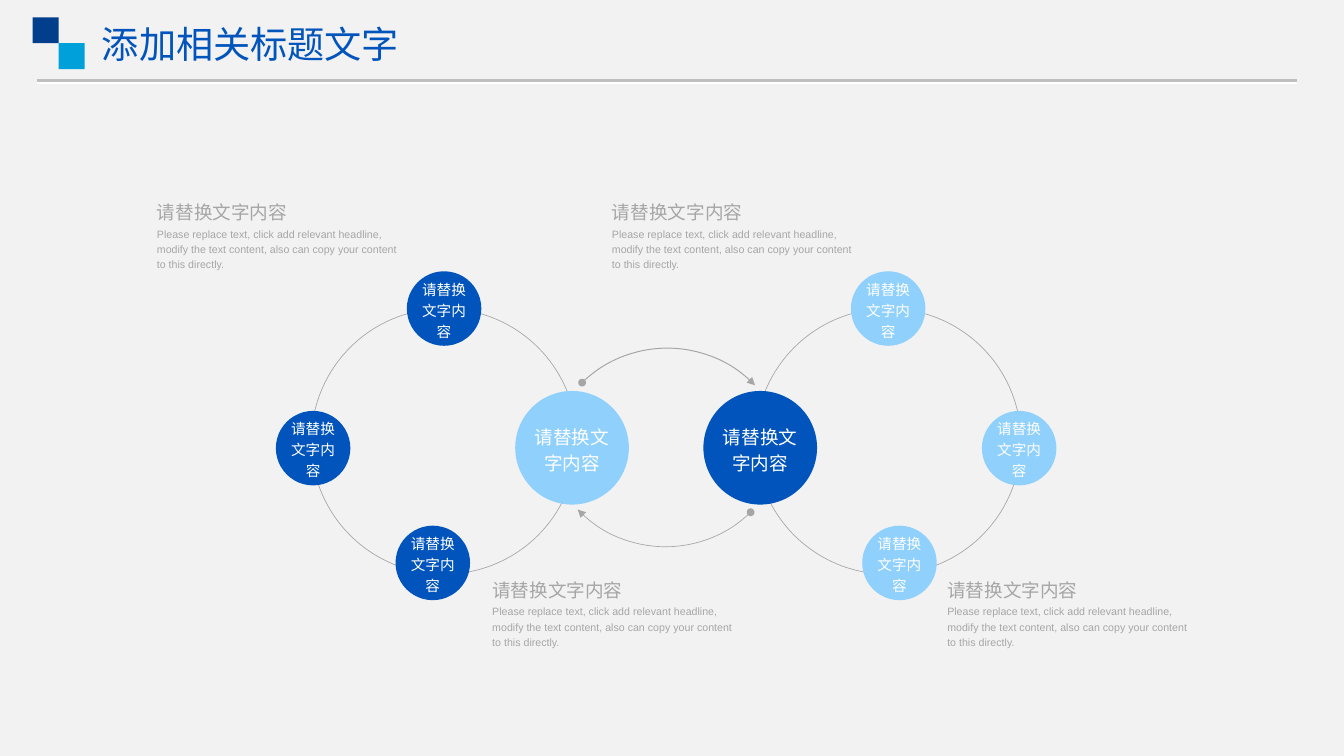
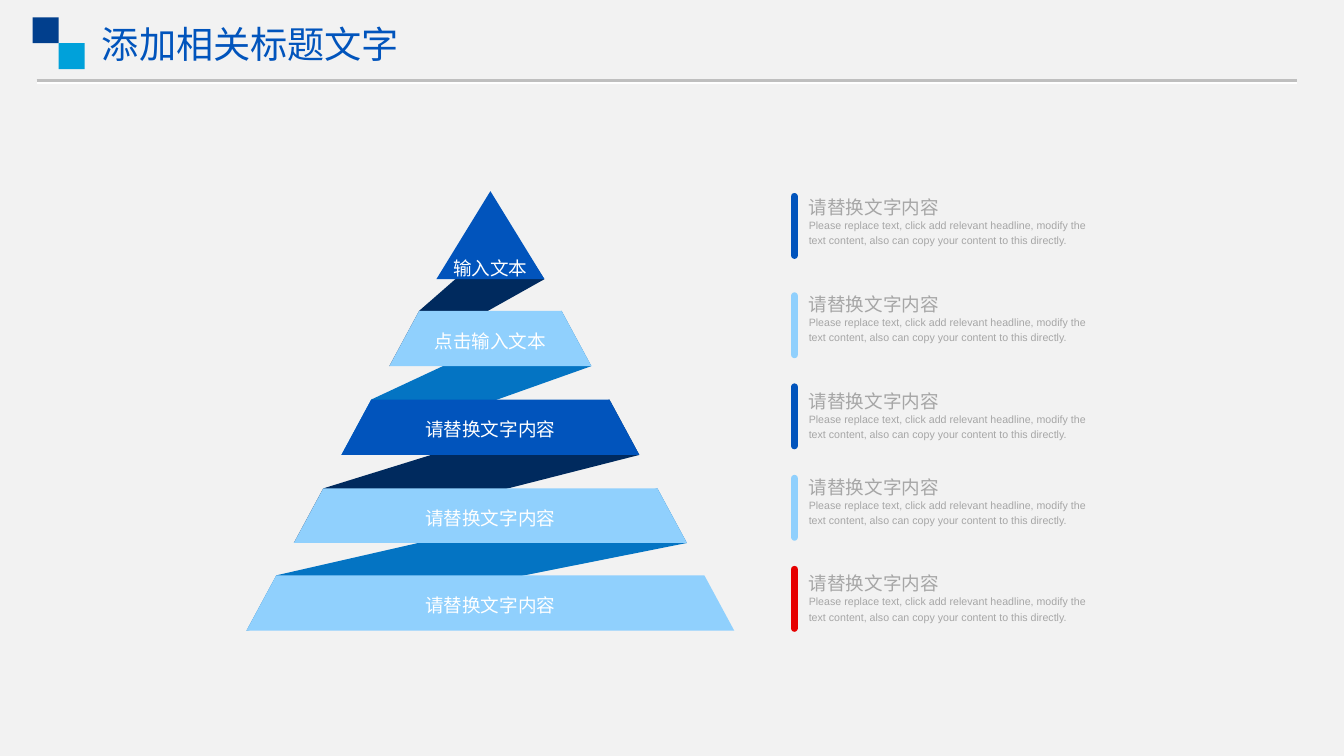
"""Build two diagram slides: linked rings and a folded pyramid."""
from lxml.etree import SubElement
from pptx import Presentation
from pptx.dml.color import RGBColor
from pptx.enum.shapes import MSO_CONNECTOR, MSO_SHAPE
from pptx.enum.text import MSO_ANCHOR, MSO_AUTO_SIZE, PP_ALIGN
from pptx.oxml.ns import qn
from pptx.util import Cm, Pt

COLORS = {
    "paper": "F2F2F2",
    "white": "FFFFFF",
    "rule": "BFBFBF",
    "grey": "A6A6A6",
    "navy": "013F8D",
    "cyan": "00A1DA",
    "blue": "0154BC",
    "sky": "90D0FD",
    "dark fold": "002A5E",
    "bright fold": "0474C3",
    "red": "E60000",
}
TITLE = "添加相关标题文字"
HEADING = "请替换文字内容"
BODY = ("Please replace text, click add relevant headline, modify the text content, "
        "also can copy your content to this directly.")


def color(name):
    return RGBColor.from_string(COLORS[name])


class SlideMaker:
    def __init__(self):
        self.deck = Presentation()
        self.deck.slide_width = Cm(35.71)
        self.deck.slide_height = Cm(20.09)
        background = self.deck.slide_master.background.fill
        background.solid()
        background.fore_color.rgb = color("paper")
        self.page = None

    def start_page(self, title):
        self.page = self.deck.slides.add_slide(self.deck.slide_layouts[6])
        self.header_rule(0.97, 34.47, 2.13)
        self.shape(MSO_SHAPE.RECTANGLE, 0.87, 0.46, 0.69, 0.69, "navy")
        self.shape(MSO_SHAPE.RECTANGLE, 1.56, 1.15, 0.69, 0.69, "cyan")
        box = self.page.shapes.add_textbox(Cm(2.46), Cm(0.43), Cm(9.2), Cm(1.45))
        box.text_frame.word_wrap = True
        self.set_text(box, title, 28, "blue", font="Noto Sans CJK SC", spacing=1)

    def header_rule(self, left, right, y):
        rule = self.page.shapes.add_connector(
            MSO_CONNECTOR.STRAIGHT, Cm(left), Cm(y), Cm(right), Cm(y))
        rule.line.color.rgb = color("rule")
        rule.line.width = Pt(2.25)
        effects = SubElement(rule._element.spPr, qn("a:effectLst"))
        shadow = SubElement(effects, qn("a:outerShdw"), dist=str(Pt(2)),
                            dir="5400000", algn="t", rotWithShape="0")
        SubElement(shadow, qn("a:srgbClr"), val=COLORS["white"])

    def paint(self, shape, fill=None, line=None, width=0.5):
        shape.shadow.inherit = False
        if fill:
            shape.fill.solid()
            shape.fill.fore_color.rgb = color(fill)
        else:
            shape.fill.background()
        if line:
            shape.line.color.rgb = color(line)
            shape.line.width = Pt(width)
        else:
            shape.line.fill.background()
        return shape

    def shape(self, kind, left, top, width, height, fill=None, line=None, line_width=0.5):
        shape = self.page.shapes.add_shape(kind, Cm(left), Cm(top), Cm(width), Cm(height))
        return self.paint(shape, fill, line, line_width)

    def polygon(self, points, fill):
        corners = [(Cm(x), Cm(y)) for x, y in points]
        builder = self.page.shapes.build_freeform(*corners[0])
        builder.add_line_segments(corners[1:], close=True)
        return self.paint(builder.convert_to_shape(), fill)

    def set_text(self, shape, text, size, ink, align=PP_ALIGN.LEFT, font="Arial", spacing=1.2):
        shape.text_frame.text = text
        para = shape.text_frame.paragraphs[0]
        para.alignment = align
        para.line_spacing = spacing
        span = para.runs[0]
        span.font.size = Pt(size)
        span.font.color.rgb = color(ink)
        span.font.name = font
        SubElement(span._r.get_or_add_rPr(), qn("a:ea"), typeface=font)

    def clear_margins(self, frame):
        frame.margin_left = frame.margin_top = frame.margin_right = frame.margin_bottom = 0

    def label(self, shape, text, size=14, anchor=MSO_ANCHOR.MIDDLE):
        frame = shape.text_frame
        self.clear_margins(frame)
        frame.word_wrap = True
        frame.vertical_anchor = anchor
        self.set_text(shape, text, size, "white", PP_ALIGN.CENTER)

    def circle(self, x, y, diameter, fill=None, line=None):
        return self.shape(MSO_SHAPE.OVAL, x - diameter / 2, y - diameter / 2,
                          diameter, diameter, fill, line)

    def arc_arrow(self, x, y, diameter, rotation, line_width):
        arc = self.shape(MSO_SHAPE.ARC, x - diameter / 2, y - diameter / 2,
                         diameter, diameter, line="grey", line_width=line_width)
        arc.rotation = rotation
        outline = arc._element.spPr.find(qn("a:ln"))
        SubElement(outline, qn("a:headEnd"), type="oval")
        SubElement(outline, qn("a:tailEnd"), type="triangle")

    def plain_text(self, left, top, width, height, text, size, wrap):
        box = self.page.shapes.add_textbox(Cm(left), Cm(top), Cm(width), Cm(height))
        self.clear_margins(box.text_frame)
        box.text_frame.word_wrap = wrap
        box.text_frame.auto_size = MSO_AUTO_SIZE.SHAPE_TO_FIT_TEXT
        self.set_text(box, text, size, "grey")

    def callout(self, left, top, width, body_drop, body_height):
        self.plain_text(left, top + body_drop, width, body_height, BODY, 8, True)
        self.plain_text(left, top, 3.48, 0.71, HEADING, 14, False)

    def bar(self, left, top, fill):
        bar = self.shape(MSO_SHAPE.ROUND_2_SAME_RECTANGLE, left, top, 0.18, 1.75, fill)
        bar.adjustments[0] = bar.adjustments[1] = 0.5


def build_rings(maker):
    maker.start_page(TITLE)
    axis = 17.7
    satellites = [(9.38, 11.91), (5.9, 8.2), (6.2, 14.96)]
    for side, hub_fill, satellite_fill in [(-1, "sky", "blue"), (1, "blue", "sky")]:
        maker.circle(axis + side * 5.9, 11.73, 7.06, line="grey")
        hub = maker.circle(axis + side * 2.5, 11.9, 3.02, hub_fill)
        maker.label(hub, HEADING)
        for offset, y in satellites:
            satellite = maker.circle(axis + side * offset, y, 1.98, satellite_fill)
            maker.label(satellite, HEADING, 11)
    maker.arc_arrow(17.73, 12.5, 6.5, 315.9, 0.75)
    maker.arc_arrow(17.68, 11.28, 6.5, 135.9, 0.5)
    for left, top in [(13.08, 15.27), (4.17, 5.23)]:
        for shift in (0, 12.09):
            maker.callout(left + shift, top, 6.55, 0.75, 1.22)


def build_pyramid(maker):
    maker.start_page(TITLE)
    center = 13.03
    bands = [
        (5.08, 7.42, "blue", "输入文本"),
        (8.26, 9.73, "sky", "点击输入文本"),
        (10.62, 12.09, "blue", HEADING),
        (12.98, 14.43, "sky", HEADING),
        (15.29, 16.76, "sky", HEADING),
    ]

    def edge(side, y):
        return center + side * 0.54 * (y - 4.76), y

    fold_starts = [(center + 0.58, 6.1)] + [edge(1, band[0]) for band in bands[1:]]
    for index, (upper, lower) in enumerate(zip(bands, bands[1:])):
        fill = ("dark fold", "bright fold")[index % 2]
        maker.polygon([fold_starts[index], edge(-1, lower[0]),
                       edge(-1, lower[1]), edge(1, upper[1])], fill)

    for index, (top, bottom, fill, text) in enumerate(bands):
        crown = [edge(-1, top), edge(1, top)] if index else [(center, top)]
        band = maker.polygon(crown + [edge(1, bottom), edge(-1, bottom)], fill)
        maker.label(band, text, anchor=MSO_ANCHOR.MIDDLE if index else MSO_ANCHOR.BOTTOM)

    entries = [(5.13, 5.08, "blue"), (7.77, 7.67, "sky"), (10.19, 10.24, "blue"),
               (12.62, 12.52, "sky"), (15.04, 15.09, "red")]
    for bar_top, text_top, fill in entries:
        maker.bar(21.02, bar_top, fill)
        maker.callout(21.49, text_top, 7.49, 0.66, 0.79)


def main():
    maker = SlideMaker()
    build_rings(maker)
    build_pyramid(maker)
    maker.deck.save("out.pptx")


if __name__ == "__main__":
    main()
